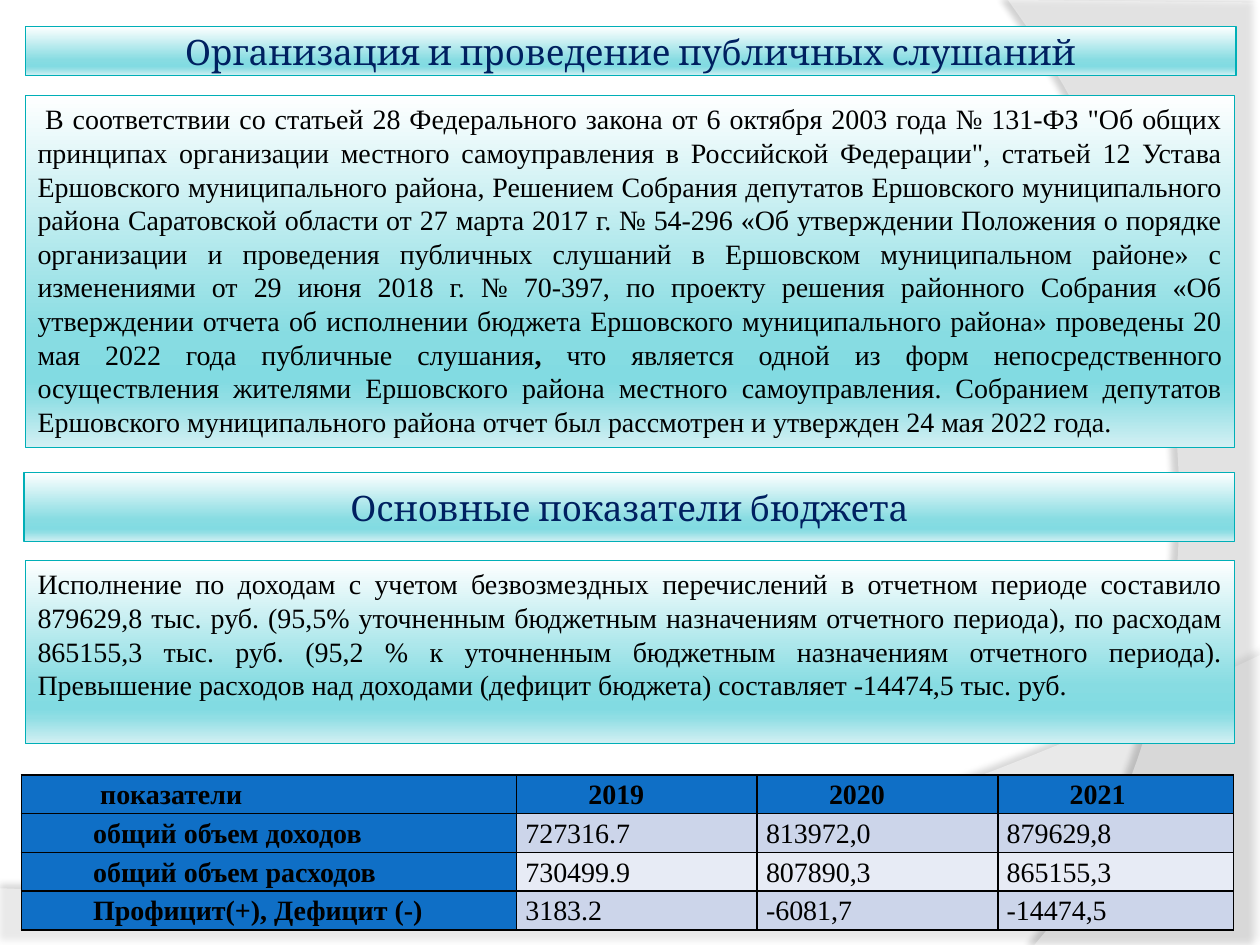
from dataclasses import dataclass

from lxml import etree
from pptx import Presentation
from pptx import util as u
from pptx.dml.color import RGBColor
from pptx.enum import shapes, text
from pptx.oxml import ns


@dataclass(frozen=True)
class Theme:
    heading_font: str = "Cambria"
    body_font: str = "Times New Roman"
    heading_size: int = 20
    body_size: int = 16
    heading: str = "002060"
    ink: str = "000000"
    panel_line: str = "00AFB7"
    panel_stops: tuple = ((0, "FEFFFF"), (68, "87DCE2"), (81, "82DBE2"),
                          (86, "90DEE4"), (100, "D3F0F3"))
    backdrop: str = "FFFFFF"
    table_head: str = "0F6FC6"
    table_bands: tuple = ("CCD5EA", "E7EBF5")


def rgb(value):
    return RGBColor.from_string(value)


def add(parent, tag, **attrs):
    return etree.SubElement(parent, ns.qn(tag), {k: str(v) for k, v in attrs.items()})


def bezier(p0, p1, p2, p3, steps=40):
    """Points along a cubic curve, without its start."""
    for i in range(1, steps + 1):
        t = i / steps
        yield tuple((1 - t) ** 3 * a + 3 * (1 - t) ** 2 * t * b
                    + 3 * (1 - t) * t * t * c + t ** 3 * d
                    for a, b, c, d in zip(p0, p1, p2, p3))


class SlideBuilder:
    def __init__(self, slide, theme):
        self.slide, self.theme = slide, theme

    def wave(self, points, opacity, shadow_opacity, distance, angle):
        """Translucent outline with a soft shadow."""
        points = [(u.Inches(x), u.Inches(y)) for x, y in points]
        builder = self.slide.shapes.build_freeform(*points[0])
        builder.add_line_segments(points[1:], close=True)
        sp = builder.convert_to_shape()
        sp.fill.solid()
        sp.fill.fore_color.rgb = rgb(self.theme.backdrop)
        sp.line.fill.background()
        sp.shadow.inherit = False
        sp_pr = sp.element.spPr
        add(sp_pr.find(".//" + ns.qn("a:srgbClr")), "a:alpha", val=opacity * 1000)
        shadow = add(sp_pr.find(ns.qn("a:effectLst")), "a:outerShdw", blurRad=u.Pt(4),
                     dist=u.Pt(distance), dir=angle * 60000, algn="ctr", rotWithShape=0)
        color = add(shadow, "a:srgbClr", val=self.theme.ink)
        add(color, "a:alpha", val=shadow_opacity * 1000)

    def panel(self, left, top, width, height):
        """Rectangle with the vertical turquoise gradient."""
        sp = self.slide.shapes.add_shape(
            shapes.MSO_SHAPE.RECTANGLE, *(u.Inches(v) for v in (left, top, width, height)))
        sp.fill.gradient()
        grad = sp.element.spPr.find(ns.qn("a:gradFill"))
        for child in list(grad):
            grad.remove(child)
        stops = add(grad, "a:gsLst")
        for position, color in self.theme.panel_stops:
            add(add(stops, "a:gs", pos=position * 1000), "a:srgbClr", val=color)
        add(grad, "a:lin", ang=90 * 60000, scaled=0)
        sp.line.color.rgb = rgb(self.theme.panel_line)
        sp.line.width = u.Pt(0.75)
        sp.shadow.inherit = False
        sp.text_frame.word_wrap = True
        return sp.text_frame

    def style(self, p, font, size, color, align, bold=False):
        p.alignment = align
        p.font.name, p.font.size, p.font.bold = font, u.Pt(size), bold
        p.font.color.rgb = rgb(color)

    def heading(self, words, *box):
        tf = self.panel(*box)
        tf.vertical_anchor = text.MSO_ANCHOR.MIDDLE
        tf.margin_left = tf.margin_right = tf.margin_top = tf.margin_bottom = u.Inches(0.05)
        p = tf.paragraphs[0]
        p.text = words
        self.style(p, self.theme.heading_font, self.theme.heading_size,
                   self.theme.heading, text.PP_ALIGN.CENTER)

    def body(self, runs, *box, first_indent=0):
        """Justified paragraph; runs are (words, bold) pairs."""
        tf = self.panel(*box)
        tf.vertical_anchor = text.MSO_ANCHOR.TOP
        p = tf.paragraphs[0]
        p._p.get_or_add_pPr().set("indent", str(u.Inches(first_indent)))
        for words, bold in runs:
            r = p.add_run()
            r.text = words
            if bold:
                r.font.bold = True
        self.style(p, self.theme.body_font, self.theme.body_size,
                   self.theme.ink, text.PP_ALIGN.JUSTIFY)

    def cell(self, cell, words, fill, is_label):
        cell.fill.solid()
        cell.fill.fore_color.rgb = rgb(fill)
        cell.margin_left = cell.margin_right = u.Inches(0.07)
        cell.margin_top = cell.margin_bottom = 0
        p = cell.text_frame.paragraphs[0]
        p.text = words
        p.line_spacing = 1.15
        if is_label:
            p._p.get_or_add_pPr().set("marL", str(u.Inches(0.5)))
        else:
            p.space_after = u.Pt(10)
        self.style(p, self.theme.body_font, self.theme.body_size, self.theme.ink,
                   text.PP_ALIGN.JUSTIFY if is_label else text.PP_ALIGN.LEFT, is_label)
        # Borders come before the fill in the cell properties
        tc_pr = cell._tc.get_or_add_tcPr()
        for i, side in enumerate(("a:lnL", "a:lnR", "a:lnT", "a:lnB")):
            line = add(tc_pr, side, w=u.Pt(1))
            add(add(line, "a:solidFill"), "a:srgbClr", val=self.theme.ink)
            tc_pr.insert(i, line)

    def table(self, rows, left, top, widths, height):
        frame = self.slide.shapes.add_table(
            len(rows), len(widths), u.Inches(left), u.Inches(top),
            u.Inches(sum(widths)), u.Inches(height))
        table = frame.table
        for column, width in zip(table.columns, widths):
            column.width = u.Inches(width)
        for i, row in enumerate(rows):
            band = self.theme.table_bands[(i + 1) % 2]
            for j, words in enumerate(row):
                is_label = i == 0 or j == 0
                fill = self.theme.table_head if is_label else band
                self.cell(table.cell(i, j), words, fill, is_label)
        return table


def main():
    prs = Presentation()
    prs.slide_width, prs.slide_height = u.Inches(10), u.Inches(7.5)
    s = SlideBuilder(prs.slides.add_slide(prs.slide_layouts[6]), Theme())

    # Background waves
    s.wave([(0, 7.05), (0, 7.5), (10, 7.5), (10, 5.2),
            *bezier((10, 5.2), (5.59, 7.29), (3.91, 7.19), (0, 7.05))], 45, 35, 3.5, 270)
    s.wave([(10, 0.02), (10, 7.5), (8.21, 7.5),
            *bezier((8.21, 7.5), (9.35, 6.19), (10.18, 3), (8, 0))], 40, 45, 4, 180)

    # Public hearings
    s.heading("Организация и проведение публичных слушаний", 0.2, 0.21, 9.61, 0.39)
    s.body([
        ("В соответствии со статьей 28 Федерального закона от 6 октября 2003 года № 131-ФЗ "
         "\"Об общих принципах организации местного самоуправления в Российской Федерации\", "
         "статьей 12 Устава Ершовского муниципального района, Решением Собрания депутатов "
         "Ершовского муниципального района Саратовской области от 27 марта 2017 г. № 54-296 "
         "«Об утверждении Положения о порядке организации и проведения публичных слушаний в "
         "Ершовском муниципальном районе» с изменениями от 29 июня 2018 г. № 70-397, по проекту "
         "решения районного Собрания «Об утверждении отчета об исполнении бюджета Ершовского "
         "муниципального района» проведены 20 мая 2022 года публичные слушания", False),
        (", ", True),
        ("что является одной из форм непосредственного осуществления жителями Ершовского района "
         "местного самоуправления. Собранием депутатов Ершовского муниципального района отчет "
         "был рассмотрен и утвержден 24 мая 2022 года.", False),
    ], 0.2, 0.76, 9.6, 2.79, first_indent=0.06)

    # Budget indicators
    s.heading("Основные показатели бюджета", 0.19, 3.75, 9.61, 0.55)
    s.body([
        ("Исполнение по доходам с учетом безвозмездных перечислений в отчетном периоде составило "
         "879629,8 тыс. руб. (95,5% уточненным бюджетным назначениям отчетного периода), по "
         "расходам 865155,3 тыс. руб. (95,2 % к уточненным бюджетным назначениям отчетного "
         "периода). Превышение расходов над доходами (дефицит бюджета) составляет "
         "-14474,5 тыс. руб.", False),
    ], 0.2, 4.45, 9.6, 1.45)

    # Budget table
    s.table([
        (" показатели", "2019", "2020", "2021"),
        ("общий объем доходов", "727316.7", "813972,0", "879629,8"),
        ("общий объем расходов", "730499.9", "807890,3", "865155,3"),
        ("Профицит(+), Дефицит (-)", "3183.2", "-6081,7", "-14474,5"),
    ], 0.17, 6.15, (3.93, 1.91, 1.91, 1.87), 1.23)

    prs.save("out.pptx")


if __name__ == "__main__":
    main()
